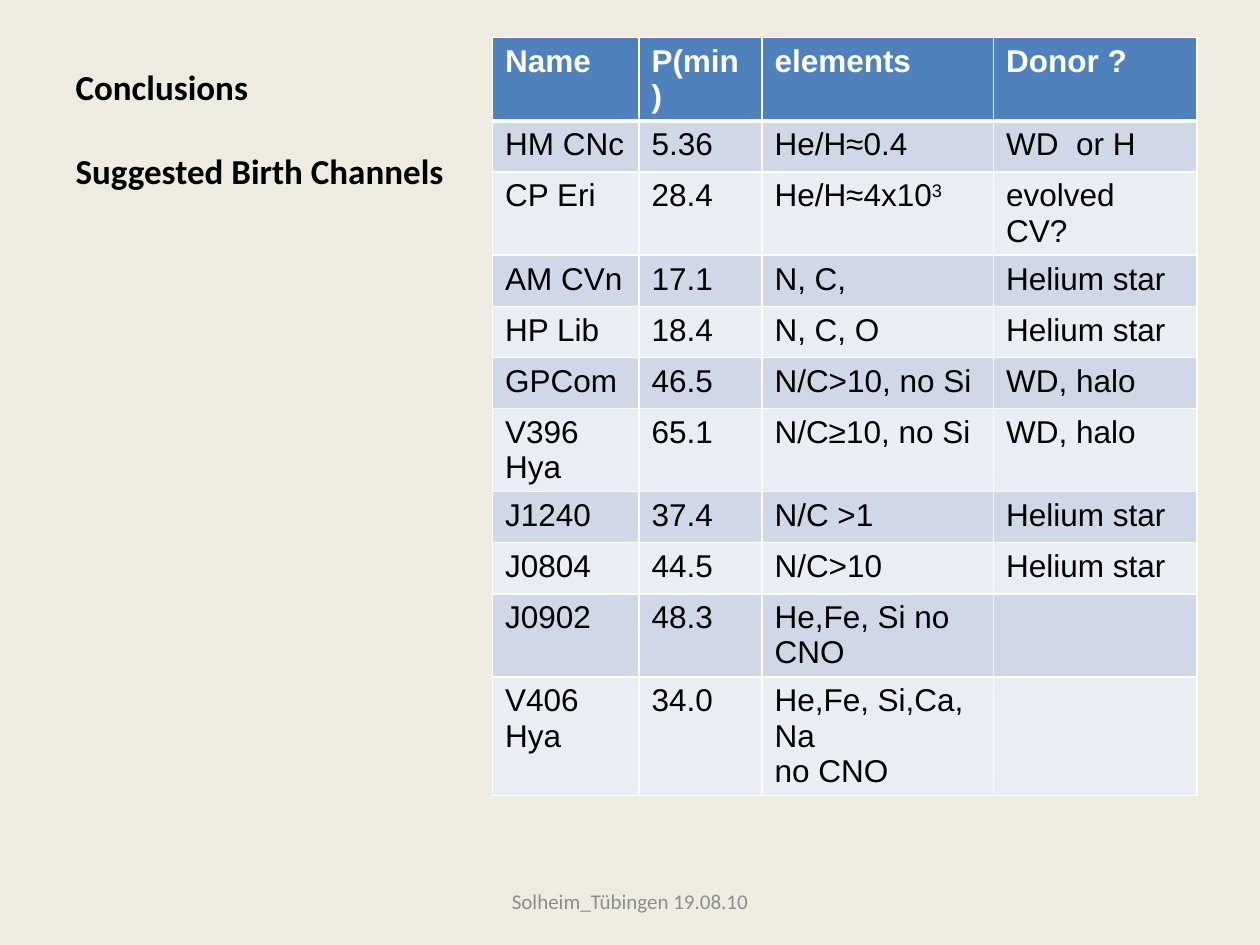
import dataclasses

import lxml.etree
import pptx
import pptx.dml.color
import pptx.enum.text
import pptx.oxml.ns
import pptx.util

Cm = pptx.util.Cm
Pt = pptx.util.Pt
qn = pptx.oxml.ns.qn


@dataclasses.dataclass(frozen=True)
class Theme:
    background: str = "EEECE1"
    header: str = "4F81BD"
    bands: tuple = ("D0D8E8", "E9EDF4")
    light: str = "FFFFFF"
    dark: str = "000000"
    muted: str = "8C8C8C"
    heading_font: str = "Calibri"
    table_font: str = "Arial"
    title_size: int = 20
    table_size: int = 18
    footer_size: int = 12


THEME = Theme()
COLUMN_WIDTHS = (2.95, 2.48, 4.67, 4.1)
RIGHT_MARGINS = (0.25, 0.32, 0.32, 0.32)
ROW_HEIGHT = 1.03
SUPERSCRIPT_MARK = "^"
STARS = (
    ("Name", "P(min)", "elements", "Donor ?"),
    ("HM CNc", "5.36", "He/H≈0.4", "WD  or H"),
    ("CP Eri", "28.4", "He/H≈4x10^3", "evolved CV?"),
    ("AM CVn", "17.1", "N, C,", "Helium star"),
    ("HP Lib", "18.4", "N, C, O", "Helium star"),
    ("GPCom", "46.5", "N/C>10, no Si", "WD, halo"),
    ("V396 Hya", "65.1", "N/C≥10, no Si", "WD, halo"),
    ("J1240", "37.4", "N/C >1", "Helium star"),
    ("J0804", "44.5", "N/C>10", "Helium star"),
    ("J0902", "48.3", "He,Fe, Si no CNO", ""),
    ("V406 Hya", "34.0", "He,Fe, Si,Ca, Na\nno CNO", ""),
)


def rgb(value):
    return pptx.dml.color.RGBColor.from_string(value)


def paint(fill, color):
    fill.solid()
    fill.fore_color.rgb = rgb(color)


def set_font(para, name, size, color, bold=False):
    para.font.name = name
    para.font.size = Pt(size)
    para.font.color.rgb = rgb(color)
    para.font.bold = bold


def add_title(page, lines):
    box = page.shapes.title
    box.left, box.top, box.width, box.height = Cm(1.27), Cm(0.76), Cm(8.36), Cm(3.23)
    frame = box.text_frame
    frame.text = "\n".join(lines)
    frame.word_wrap = True
    frame.auto_size = pptx.enum.text.MSO_AUTO_SIZE.NONE
    frame.vertical_anchor = pptx.enum.text.MSO_ANCHOR.BOTTOM
    for index, para in enumerate(frame.paragraphs):
        para.alignment = pptx.enum.text.PP_ALIGN.LEFT
        para.space_before = Pt(24 if index else 0)
        set_font(para, THEME.heading_font, THEME.title_size, THEME.dark, True)


def set_border(cell, side, width):
    line = lxml.etree.SubElement(
        cell._tc.get_or_add_tcPr(), qn("a:" + side), w=str(Pt(width))
    )
    fill = lxml.etree.SubElement(line, qn("a:solidFill"))
    lxml.etree.SubElement(fill, qn("a:srgbClr"), val=THEME.light)


def write_line(para, text, color, bold):
    base, _, power = text.partition(SUPERSCRIPT_MARK)
    para.add_run().text = base
    if power:
        span = para.add_run()
        span.text = power
        span._r.get_or_add_rPr().set("baseline", "30000")
    set_font(para, THEME.table_font, THEME.table_size, color, bold)


def fill_cell(cell, text, row):
    is_header = row == 0
    widths = {
        "lnL": 1,
        "lnR": 1,
        "lnT": 3 if row == 1 else 1,
        "lnB": 3 if is_header else 1,
    }
    for side, width in widths.items():
        set_border(cell, side, width)
    paint(cell.fill, THEME.header if is_header else THEME.bands[(row - 1) % 2])
    color = THEME.light if is_header else THEME.dark
    frame = cell.text_frame
    for index, line in enumerate(text.split("\n") if text else ()):
        para = frame.add_paragraph() if index else frame.paragraphs[0]
        write_line(para, line, color, is_header)


def add_star_table(page):
    table = page.shapes.add_table(
        len(STARS), len(COLUMN_WIDTHS), Cm(9.93), Cm(0.76),
        Cm(sum(COLUMN_WIDTHS)), Cm(ROW_HEIGHT * len(STARS)),
    ).table
    for column, width in zip(table.columns, COLUMN_WIDTHS):
        column.width = Cm(width)
    for row, texts in enumerate(STARS):
        table.rows[row].height = Cm(ROW_HEIGHT)
        for column, text in enumerate(texts):
            cell = table.cell(row, column)
            cell.margin_right = Cm(RIGHT_MARGINS[column])
            fill_cell(cell, text, row)


def add_footer(page, text):
    box = page.shapes.add_textbox(Cm(8.68), Cm(17.65), Cm(8.04), Cm(1.02))
    frame = box.text_frame
    frame.word_wrap = True
    frame.vertical_anchor = pptx.enum.text.MSO_ANCHOR.MIDDLE
    para = frame.paragraphs[0]
    para.add_run().text = text
    para.alignment = pptx.enum.text.PP_ALIGN.CENTER
    set_font(para, THEME.heading_font, THEME.footer_size, THEME.muted)


def main():
    deck = pptx.Presentation()
    deck.slide_width, deck.slide_height = Cm(25.4), Cm(19.05)
    page = deck.slides.add_slide(deck.slide_layouts.get_by_name("Title Only"))
    paint(page.background.fill, THEME.background)
    add_title(page, ("Conclusions", "Suggested Birth Channels"))
    add_star_table(page)
    add_footer(page, "Solheim_Tübingen 19.08.10")
    deck.save("out.pptx")


if __name__ == "__main__":
    main()
